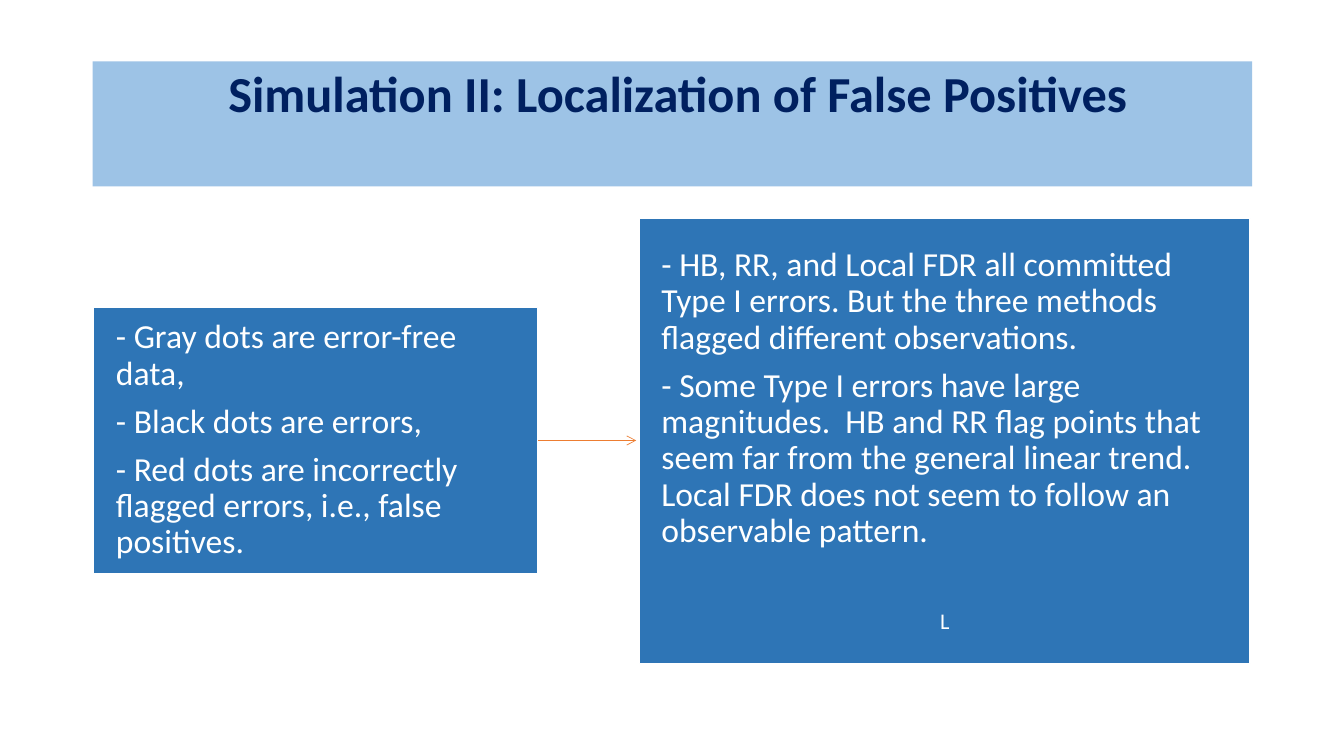
from pptx import Presentation
from pptx.dml.color import RGBColor
from pptx.enum.shapes import MSO_CONNECTOR, MSO_SHAPE
from pptx.enum.text import MSO_ANCHOR, PP_ALIGN
from pptx.oxml.ns import qn
from pptx.util import Inches, Pt
from lxml.etree import SubElement

HUES = {"band": "9DC3E6", "title": "002060", "panel": "2E75B6",
        "white": "FFFFFF", "arrow": "ED7D31"}

# Boxes: left, top, width, height in inches
BAND = (0.92, 0.61, 11.5, 1.24)
LEFT = (0.93, 3.05, 4.4, 2.64)
RIGHT = (6.34, 2.17, 6.06, 4.41)

DOTS = ["- Gray dots are error-free data,",
        "- Black dots are errors,",
        "- Red dots are incorrectly flagged errors, i.e., false positives."]
NOTES = ["- HB, RR, and Local FDR all committed Type I errors. "
         "But the three methods flagged different observations.",
         "- Some Type I errors have large magnitudes.  HB and RR flag points "
         "that seem far from the general linear trend.  Local FDR does not "
         "seem to follow an observable pattern."]


def hue(name):
    return RGBColor.from_string(HUES[name])


def block(slide, box, fill, insets, anchor):
    """Filled rectangle; returns the shape with its text frame set up."""
    shape = slide.shapes.add_shape(MSO_SHAPE.RECTANGLE, *map(Inches, box))
    shape.shadow.inherit = False
    shape.fill.solid()
    shape.fill.fore_color.rgb = hue(fill)
    shape.line.fill.background()
    frame = shape.text_frame
    frame.word_wrap = True
    frame.vertical_anchor = anchor
    (frame.margin_left, frame.margin_top,
     frame.margin_right, frame.margin_bottom) = map(Inches, insets)
    return shape


def write(para, text, size, color, align=PP_ALIGN.LEFT, bold=False):
    para.alignment = align
    para.line_spacing = 0.9
    run = para.add_run()
    run.text = text
    font = run.font
    font.name, font.size, font.bold = "Calibri", Pt(size), bold
    font.color.rgb = hue(color)


def header(slide, box, text):
    shape = block(slide, box, "band", (0.21, 0.07, 0.1, 0.05), MSO_ANCHOR.TOP)
    write(shape.text_frame.paragraphs[0], text, 36, "title",
          PP_ALIGN.CENTER, True)


def panel(slide, box, lines, foot=None):
    """Blue panel with spaced lines and an optional small centred footer."""
    shape = block(slide, box, "panel", (0.22, 0.23) * 2, MSO_ANCHOR.MIDDLE)
    shape.line.color.rgb = hue("white")
    shape.line.width = Pt(1)
    frame = shape.text_frame
    for i, line in enumerate(lines):
        para = frame.add_paragraph() if i else frame.paragraphs[0]
        write(para, line, 24, "white")
        para.space_after = Pt(8.4)
    if foot:
        para = frame.add_paragraph()
        write(para, foot, 16, "white", PP_ALIGN.CENTER)
        para.space_before = Pt(35)
        para.space_after = Pt(5.6)


def arrow(slide, start, end):
    """Level arrow from the right side of one box to just before the next."""
    mid = start[1] + start[3] / 2
    ends = (start[0] + start[2], mid, end[0] - 0.03, mid)
    line = slide.shapes.add_connector(MSO_CONNECTOR.STRAIGHT,
                                      *map(Inches, ends))
    line.line.color.rgb = hue("arrow")
    line.line.width = Pt(0.5)
    SubElement(line.line._get_or_add_ln(), qn("a:tailEnd"), type="arrow")
    SubElement(line._element.spPr, qn("a:effectLst"))


def main():
    deck = Presentation()
    deck.slide_width, deck.slide_height = Inches(13.33), Inches(7.5)
    slide = deck.slides.add_slide(deck.slide_layouts[6])

    # Title band
    header(slide, BAND, "Simulation II: Localization of False Positives")
    # Legend leading to findings
    arrow(slide, LEFT, RIGHT)
    panel(slide, LEFT, DOTS)
    panel(slide, RIGHT, NOTES, "L")

    deck.save("out.pptx")


if __name__ == "__main__":
    main()
